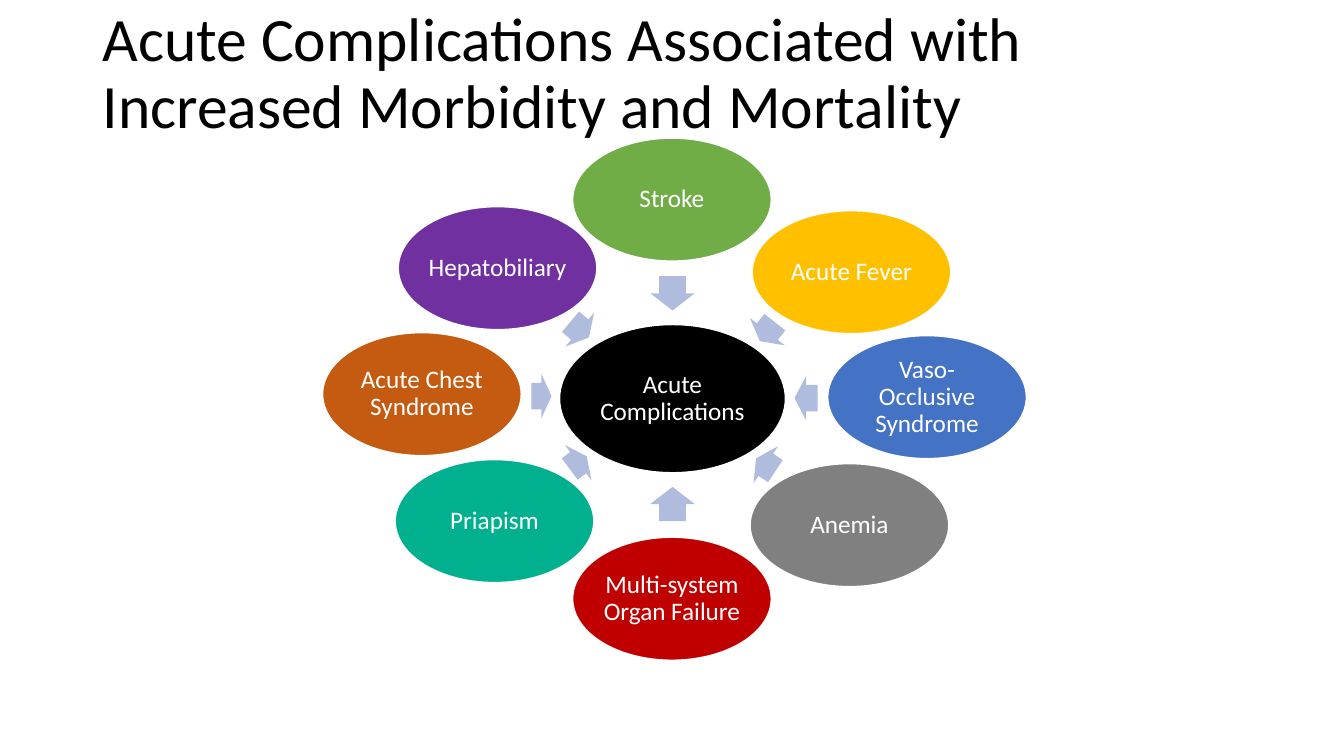
from pptx import Presentation
from pptx.dml.color import RGBColor
from pptx.enum.shapes import MSO_SHAPE as Kind
from pptx.enum.text import MSO_ANCHOR as Anchor, PP_ALIGN as Align
from pptx.util import Inches, Pt

FONT = "Calibri"
WHITE, BLACK, PALE = "FFFFFF", "000000", "B0BCDE"
NODE = (1.97, 1.22)
HUB = (5.55, 3.22, 2.24, 1.47)
HEAD = 0.44  # arrow breadth

# Label, fill, oval left and top, then arrow left, top, length and turn
NODES = [
    ("Stroke", "70AD47", 5.68, 1.37, 6.5, 2.69, 0.34, 90),
    ("Acute Fever", "FFC000", 7.46, 2.09, 7.49, 3.07, 0.24, 128.3),
    ("Vaso-Occlusive Syndrome", "4472C4", 8.21, 3.33, 7.88, 3.73, 0.23, 180),
    ("Anemia", "808080", 7.44, 4.6, 7.48, 4.39, 0.23, 213.5),
    ("Multi-system Organ Failure", "C00000", 5.68, 5.33, 6.5, 4.78, 0.34, 270),
    ("Priapism", "00B08E", 3.92, 4.56, 5.63, 4.37, 0.21, 323.1),
    ("Acute Chest Syndrome", "C55A11", 3.2, 3.3, 5.27, 3.71, 0.2, 0),
    ("Hepatobiliary", "7030A0", 3.95, 2.05, 5.63, 3.05, 0.24, 40.2),
]


def color(code):
    return RGBColor.from_string(code)


def write(frame, text, size=18, ink=WHITE, align=Align.CENTER, pad=(0, 0)):
    """Fill a text frame with one formatted paragraph."""
    frame.word_wrap = True
    frame.vertical_anchor = Anchor.MIDDLE
    frame.margin_left = frame.margin_right = Inches(pad[0])
    frame.margin_top = frame.margin_bottom = Inches(pad[1])
    para = frame.paragraphs[0]
    para.alignment = align
    para.line_spacing = 0.9
    run = para.add_run()
    run.text = text
    run.font.name = FONT
    run.font.size = Pt(size)
    run.font.color.rgb = color(ink)


def shape(slide, kind, box, fill):
    item = slide.shapes.add_shape(kind, *map(Inches, box))
    item.shadow.inherit = False
    item.fill.solid()
    item.fill.fore_color.rgb = color(fill)
    return item


def oval(slide, text, box, fill):
    item = shape(slide, Kind.OVAL, box, fill)
    item.line.color.rgb = color(WHITE)
    item.line.width = Pt(1)
    write(item.text_frame, text)


def arrow(slide, box, turn):
    item = shape(slide, Kind.RIGHT_ARROW, box, PALE)
    item.line.fill.background()
    item.adjustments[0] = 0.6
    item.adjustments[1] = 0.5
    item.rotation = turn


def title(slide, text, box):
    frame = slide.shapes.add_textbox(*map(Inches, box)).text_frame
    write(frame, text, size=44, ink=BLACK, align=Align.LEFT, pad=(0.1, 0.05))


def main():
    deck = Presentation()
    deck.slide_width, deck.slide_height = Inches(13.33), Inches(7.5)
    slide = deck.slides.add_slide(deck.slide_layouts[6])

    # Heading
    title(slide, "Acute Complications Associated with Increased Morbidity "
          "and Mortality", (0.92, 0.02, 11.5, 1.45))

    # Hub and its ring of complications
    oval(slide, "Acute Complications", HUB, BLACK)
    for text, fill, left, top, x, y, length, turn in NODES:
        arrow(slide, (x, y, length, HEAD), turn)
        oval(slide, text, (left, top, *NODE), fill)

    deck.save("out.pptx")


if __name__ == "__main__":
    main()
